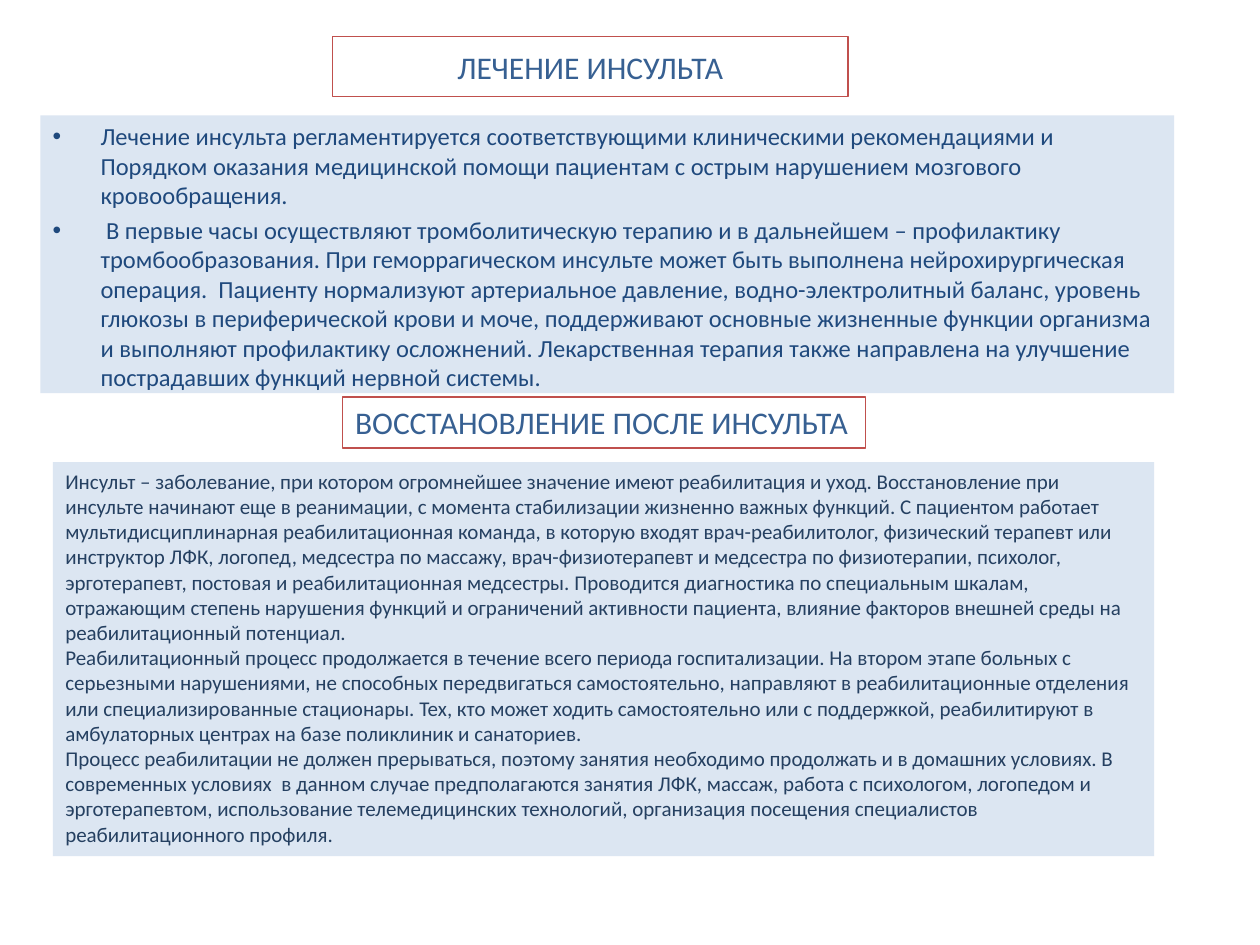
import pptx
import pptx.util
import pptx.dml.color
import pptx.enum.text
import pptx.oxml.ns
import lxml.etree

W, H = 10, 7.5
inch = pptx.util.Inches
pt = pptx.util.Pt
enum = pptx.enum.text

deck = pptx.Presentation()
deck.slide_width, deck.slide_height = inch(W), inch(H)
slide = deck.slides.add_slide(deck.slide_layouts[6])


def tint(hue):
    return pptx.dml.color.RGBColor.from_string(hue)


def panel(x, y, w, h, texts, size, hue, fill=None, edge=None):
    """Add a text box placed by shares of the slide's width and height."""
    box = slide.shapes.add_textbox(inch(x * W), inch(y * H), inch(w * W), inch(h * H))
    if fill:
        box.fill.solid()
        box.fill.fore_color.rgb = tint(fill)
    if edge:
        box.line.color.rgb = tint(edge)
        box.line.width = pt(0.75)
    frame = box.text_frame
    frame.word_wrap = True
    for i, text in enumerate(texts):
        para = frame.paragraphs[0] if i == 0 else frame.add_paragraph()
        run = para.add_run()
        run.text = text
        run.font.name = "Calibri"
        run.font.size = pt(size)
        run.font.color.rgb = tint(hue)
    return frame


# Colours
BLUE, PALE, RED = "376092", "DCE6F2", "C0504D"

# Treatment heading
head = panel(0.264, 0.039, 0.409, 0.063, ["ЛЕЧЕНИЕ ИНСУЛЬТА"], 18, BLUE, edge=RED)
head.vertical_anchor = enum.MSO_ANCHOR.MIDDLE
head.paragraphs[0].alignment = enum.PP_ALIGN.CENTER

# Treatment bullets
cure = panel(0.032, 0.122, 0.9, 0.294, [
    "Лечение инсульта регламентируется соответствующими клиническими рекомендациями и "
    "Порядком оказания медицинской помощи пациентам с острым нарушением мозгового "
    "кровообращения.",
    " В первые часы осуществляют тромболитическую терапию и в дальнейшем – профилактику "
    "тромбообразования. При геморрагическом инсульте может быть выполнена нейрохирургическая "
    "операция.  Пациенту нормализуют артериальное давление, водно-электролитный баланс, уровень "
    "глюкозы в периферической крови и моче, поддерживают основные жизненные функции организма "
    "и выполняют профилактику осложнений. Лекарственная терапия также направлена на улучшение "
    "пострадавших функций нервной системы.",
], 14, "1F497D", fill=PALE)
for para in cure.paragraphs:
    para.space_before = pt(3)
    prop = para._p.get_or_add_pPr()
    prop.set("marL", str(inch(0.38)))
    prop.set("indent", str(-inch(0.38)))
    for tag, key, val in (("a:buFont", "typeface", "Arial"), ("a:buChar", "char", "•")):
        lxml.etree.SubElement(prop, pptx.oxml.ns.qn(tag)).set(key, val)

# Recovery heading
head = panel(0.272, 0.42, 0.415, 0.054, ["ВОССТАНОВЛЕНИЕ ПОСЛЕ ИНСУЛЬТА"], 18, BLUE, edge=RED)
head.word_wrap = False
head.auto_size = enum.MSO_AUTO_SIZE.SHAPE_TO_FIT_TEXT

# Recovery text
care = panel(0.042, 0.489, 0.874, 0.417, [
    "Инсульт – заболевание, при котором огромнейшее значение имеют реабилитация и уход. "
    "Восстановление при инсульте начинают еще в реанимации, с момента стабилизации жизненно "
    "важных функций. С пациентом работает мультидисциплинарная реабилитационная команда, в "
    "которую входят врач-реабилитолог, физический терапевт или инструктор ЛФК, логопед, "
    "медсестра по массажу, врач-физиотерапевт и медсестра по физиотерапии, психолог, "
    "эрготерапевт, постовая и реабилитационная медсестры. Проводится диагностика по "
    "специальным шкалам, отражающим степень нарушения функций и ограничений активности "
    "пациента, влияние факторов внешней среды на реабилитационный потенциал.",
    "Реабилитационный процесс продолжается в течение всего периода госпитализации. На втором "
    "этапе больных с серьезными нарушениями, не способных передвигаться самостоятельно, "
    "направляют в реабилитационные отделения или специализированные стационары. Тех, кто может "
    "ходить самостоятельно или с поддержкой, реабилитируют в амбулаторных центрах на базе "
    "поликлиник и санаториев.",
    "Процесс реабилитации не должен прерываться, поэтому занятия необходимо продолжать и в "
    "домашних условиях. В современных условиях  в данном случае предполагаются занятия ЛФК, "
    "массаж, работа с психологом, логопедом и эрготерапевтом, использование телемедицинских "
    "технологий, организация посещения специалистов реабилитационного профиля.",
], 12, "254061", fill=PALE)
care.auto_size = enum.MSO_AUTO_SIZE.SHAPE_TO_FIT_TEXT

deck.save("out.pptx")
